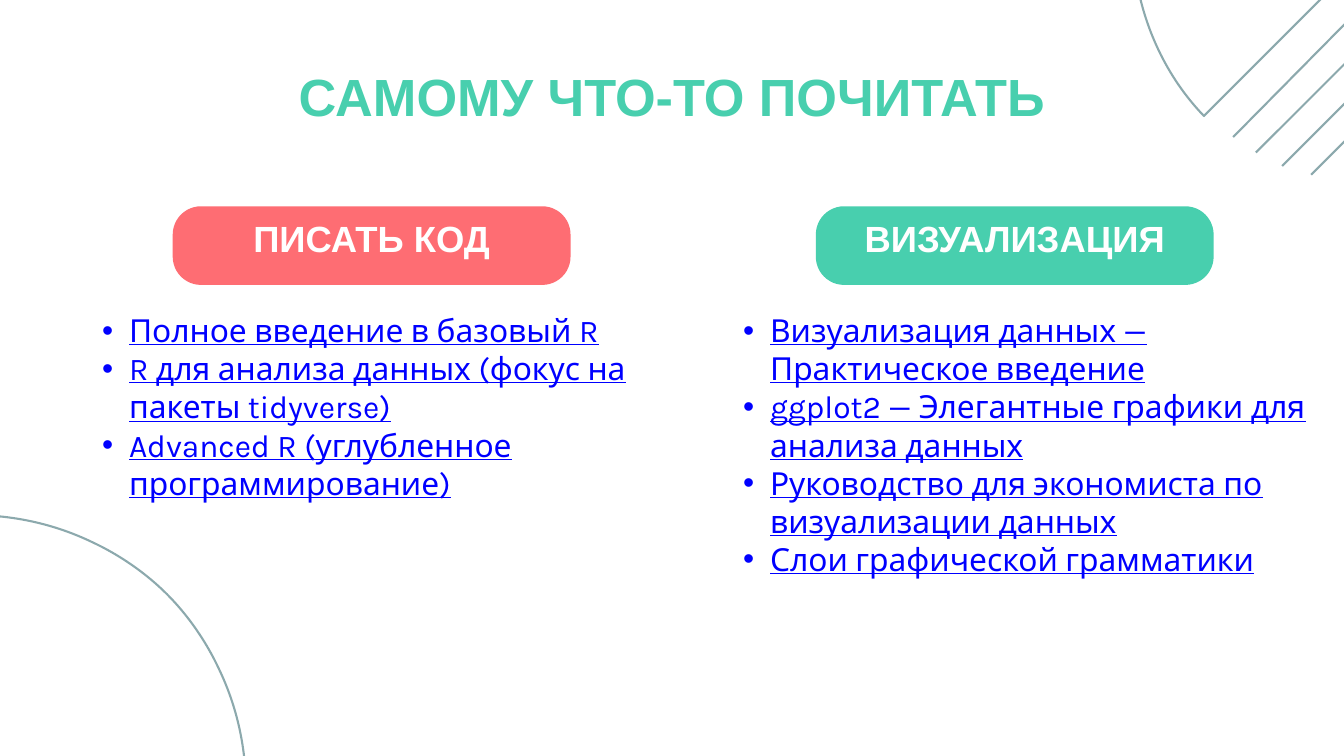
from lxml.etree import SubElement
from pptx import Presentation
from pptx.dml.color import RGBColor
from pptx.enum.shapes import MSO_CONNECTOR, MSO_SHAPE
from pptx.enum.text import MSO_AUTO_SIZE, MSO_ANCHOR, PP_ALIGN
from pptx.oxml.ns import qn
from pptx.util import Inches, Pt

TEAL = RGBColor(0x48, 0xCF, 0xAE)
CORAL = RGBColor(0xFE, 0x6D, 0x73)
BLUE = RGBColor(0x00, 0x00, 0xFF)
GREY = RGBColor(0x8C, 0xA9, 0xAD)
WHITE = RGBColor(0xFF, 0xFF, 0xFF)

# Content: heading, colour, lines taken by the list, readings
TITLE = "САМОМУ ЧТО-ТО ПОЧИТАТЬ"
TOPICS = [
    ("ПИСАТЬ КОД", CORAL, 5, [
        "Полное введение в базовый R",
        "R для анализа данных (фокус на пакеты tidyverse)",
        "Advanced R (углубленное программирование)",
    ]),
    ("ВИЗУАЛИЗАЦИЯ", TEAL, 7, [
        "Визуализация данных — Практическое введение",
        "ggplot2 — Элегантные графики для анализа данных",
        "Руководство для экономиста по визуализации данных",
        "Слои графической грамматики",
    ]),
]

TITLE_FONT = {"name": "Arial", "size": Pt(56), "bold": True}
HEADING_FONT = {"name": "Arial", "size": Pt(39), "bold": True}
READING_FONT = {"name": "Karla", "size": Pt(34), "underline": True}

# Layout in inches
SLIDE_W, SLIDE_H = 20, 11.25
LIST_LEFT, LIST_STEP, LIST_TOP, LIST_W, LINE_H = 1.12, 9.54, 4.63, 8.88, 0.56
PILL_LEFT, PILL_STEP, PILL_TOP, PILL_W, PILL_H = 2.57, 9.57, 3.07, 5.92, 1.17
HEADING_TOP, HEADING_H = 3.33, 0.65

# Sector lying on its chord: left half of the outline, mirrored for the right half
SECTOR_W, SECTOR_H = 8.11, 3.9
LEFT_HALF = [(0, 3.9), (0.03, 2.29), (1.15, 0.79), (2.72, 0.24), (3.13, 0.09), (3.6, 0)]
SECTOR_TOP = (SECTOR_W / 2, 0)
SECTORS = [(15.35, -4.47, 315), (-2.95, 8.27, 45)]  # left, top, rotation
STRIPES = [
    ((18.35, 2.04), (23.96, -3.64)),
    ((18.69, 2.27), (24.2, -3.24)),
    ((19.08, 2.47), (24.41, -2.86)),
    ((19.51, 2.6), (24.64, -2.53)),
]


def fill_frame(frame, lines, font, color, spacing, align, bullets=False):
    settings = {"word_wrap": True, "auto_size": MSO_AUTO_SIZE.NONE,
                "vertical_anchor": MSO_ANCHOR.TOP,
                "margin_left": 0, "margin_right": 0, "margin_top": 0, "margin_bottom": 0}
    for key, value in settings.items():
        setattr(frame, key, value)
    for i, line in enumerate(lines):
        paragraph = frame.add_paragraph() if i else frame.paragraphs[0]
        paragraph.alignment = align
        paragraph.line_spacing = Pt(spacing)
        if bullets:
            properties = paragraph._p.get_or_add_pPr()
            properties.set("marL", str(Inches(0.8)))
            properties.set("indent", str(Inches(-0.4)))
            SubElement(properties, qn("a:buFont"), typeface="Arial")
            SubElement(properties, qn("a:buChar"), char="•")
        run = paragraph.add_run()
        run.text = line
        for key, value in font.items():
            setattr(run.font, key, value)
        run.font.color.rgb = color


def style_line(shape):
    shape.line.color.rgb = GREY
    shape.line.width = Pt(2.25)


def draw_sector(shapes, left, top, rotation):
    right_half = [(SECTOR_W - x, y) for x, y in reversed(LEFT_HALF)]
    outline = [(Inches(x), Inches(y)) for x, y in LEFT_HALF + [SECTOR_TOP] + right_half]
    builder = shapes.build_freeform(*outline[0])
    builder.add_line_segments(outline[1:], close=True)
    sector = builder.convert_to_shape(Inches(left), Inches(top))
    # Every three points become the controls and end of one Bezier curve
    segments = list(sector._element.iter(qn("a:lnTo")))
    for first in range(0, len(outline) - 1, 3):
        start, *others = segments[first:first + 3]
        start.tag = qn("a:cubicBezTo")
        for other in others:
            start.append(other[0])
            other.getparent().remove(other)
    sector.rotation = rotation
    sector.shadow.inherit = False
    sector.fill.background()
    style_line(sector)


prs = Presentation()
prs.slide_width, prs.slide_height = Inches(SLIDE_W), Inches(SLIDE_H)
slide = prs.slides.add_slide(prs.slide_layouts[5])
shapes = slide.shapes

# Title
title = shapes.title
title.left, title.top, title.width, title.height = map(Inches, (4.16, 1.12, 11.68, 0.92))
fill_frame(title.text_frame, [TITLE], TITLE_FONT, TEAL, 55.4, PP_ALIGN.CENTER)

# Two columns: heading on a pill above a reading list
for column, (topic, color, line_count, readings) in enumerate(TOPICS):
    pill_left = Inches(PILL_LEFT + column * PILL_STEP)
    pill = shapes.add_shape(MSO_SHAPE.ROUNDED_RECTANGLE, pill_left, Inches(PILL_TOP),
                            Inches(PILL_W), Inches(PILL_H))
    pill.adjustments[0] = 0.36
    pill.shadow.inherit = False
    pill.fill.solid()
    pill.fill.fore_color.rgb = color
    pill.line.fill.background()

    heading = shapes.add_textbox(pill_left, Inches(HEADING_TOP),
                                 Inches(PILL_W), Inches(HEADING_H))
    fill_frame(heading.text_frame, [topic], HEADING_FONT, WHITE, 39, PP_ALIGN.CENTER)

    reading_list = shapes.add_textbox(Inches(LIST_LEFT + column * LIST_STEP), Inches(LIST_TOP),
                                      Inches(LIST_W), Inches(line_count * LINE_H))
    fill_frame(reading_list.text_frame, readings, READING_FONT, BLUE, 40.8,
               PP_ALIGN.LEFT, bullets=True)

# Corner sectors
for left, top, rotation in SECTORS:
    draw_sector(shapes, left, top, rotation)

# Diagonal stripes
for start, end in STRIPES:
    stripe = shapes.add_connector(MSO_CONNECTOR.STRAIGHT, *map(Inches, start + end))
    style_line(stripe)
    SubElement(stripe._element.spPr, qn("a:effectLst"))

prs.save("out.pptx")
